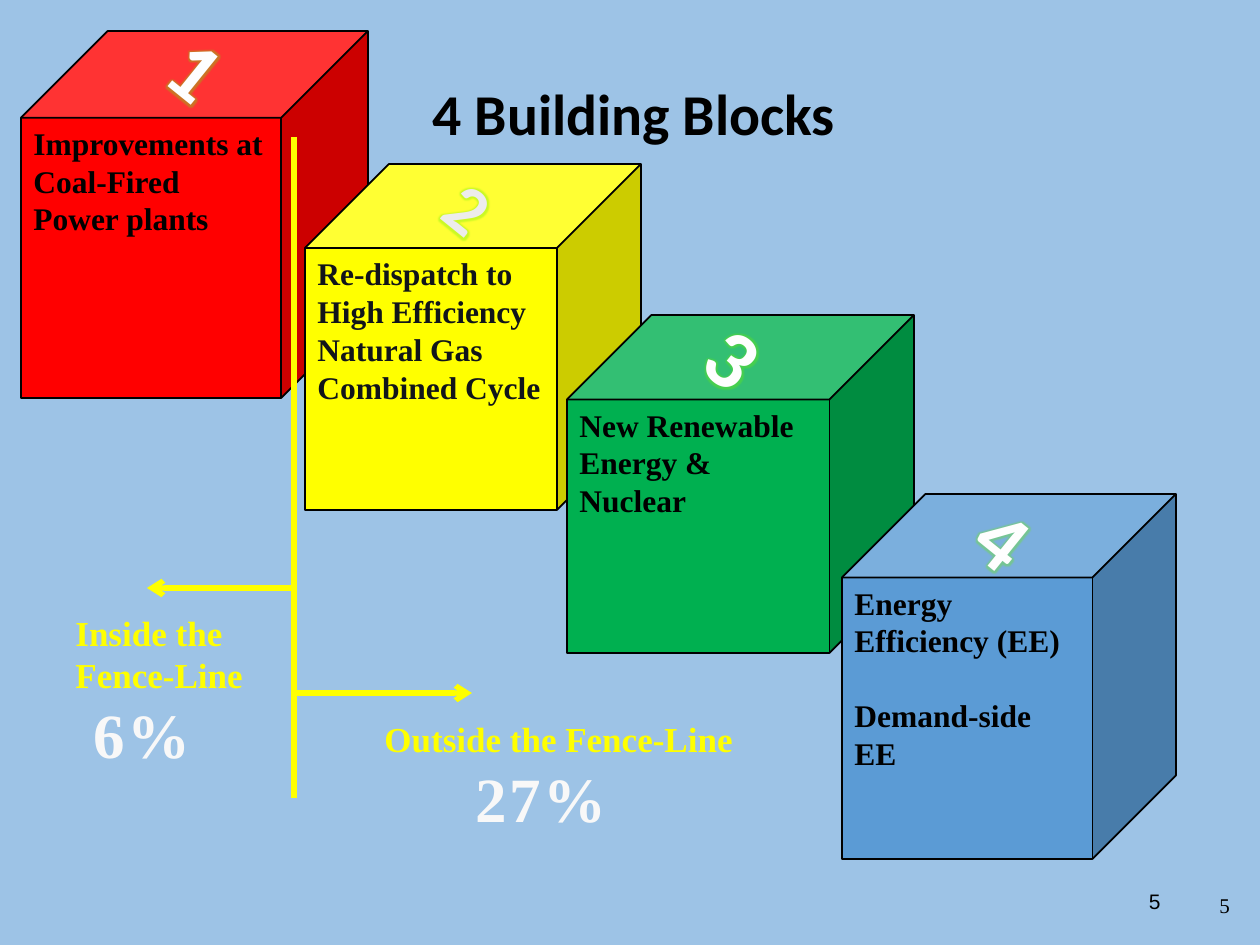
from typing import NamedTuple

from lxml.etree import SubElement
from pptx import Presentation
from pptx.dml.color import RGBColor
from pptx.enum.shapes import MSO_CONNECTOR, MSO_SHAPE
from pptx.enum.text import MSO_ANCHOR, MSO_AUTO_SIZE, PP_ALIGN
from pptx.oxml import parse_xml
from pptx.oxml.ns import nsdecls, qn
from pptx.util import Pt

SCALE = 914400 / 126
SERIF = "Times New Roman"
SANS = "Calibri"
HUES = {
    "sky": "9DC3E6",
    "black": "000000",
    "ink": "11151A",
    "red": "FF0000",
    "yellow": "FFFF00",
    "green": "00B050",
    "blue": "5B9BD5",
    "pale": "F8F8F8",
    "white": "FEFEFE",
    "grey": "EDECEC",
    "edge": "64A637",
    "glow": "6CF00A",
}


class Box(NamedTuple):
    left: int
    top: int
    width: int
    height: int


class Cube(NamedTuple):
    box: Box
    fill: str
    lines: list[str]
    ink: str = "black"


class Label(NamedTuple):
    text: str
    box: Box
    size: int
    hue: str
    font: str = SERIF
    bold: bool = True
    align: PP_ALIGN = PP_ALIGN.LEFT
    anchor: MSO_ANCHOR = MSO_ANCHOR.TOP
    space: int = 0
    turn: int = 0
    glow: bool = False


class Line(NamedTuple):
    start: tuple[int, int]
    end: tuple[int, int]
    arrow: bool = False


CUBES = [
    Cube(Box(21, 31, 347, 367), "red", ["Improvements at Coal-Fired Power plants"]),
    Cube(Box(305, 164, 336, 346), "yellow",
         ["Re-dispatch to High Efficiency Natural Gas Combined Cycle"], "ink"),
    Cube(Box(567, 315, 347, 338), "green", ["New Renewable Energy & Nuclear"]),
    Cube(Box(842, 494, 334, 365), "blue", ["Energy Efficiency (EE)", "Demand-side EE"]),
]

LINES = [
    Line((294, 137), (294, 798)),
    Line((294, 588), (147, 588), True),
    Line((294, 693), (472, 693), True),
]


def share(text: str, box: Box) -> Label:
    return Label(text, box, 36, "pale", align=PP_ALIGN.CENTER, space=150)


def digit(text: str, box: Box, size: int = 48, hue: str = "white") -> Label:
    return Label(text, box, size, hue, SANS, align=PP_ALIGN.CENTER,
                 space=50, turn=39, glow=True)


PAGES = [
    Label("5", Box(890, 876, 283, 50), 12, "black", "Arial", False,
          PP_ALIGN.RIGHT, MSO_ANCHOR.MIDDLE),
    Label("5", Box(1207, 858, 53, 66), 12, "black", SERIF, False,
          anchor=MSO_ANCHOR.BOTTOM),
]

LABELS = [
    Label("Inside the Fence-Line", Box(63, 605, 194, 97), 20, "yellow"),
    Label("Outside the Fence-Line", Box(372, 711, 384, 55), 20, "yellow"),
    share("6%", Box(63, 689, 158, 89)),
    share("27%", Box(462, 753, 158, 89)),
    digit("3", Box(698, 299, 73, 115)),
    digit("4", Box(968, 480, 73, 115)),
    digit("1", Box(161, 11, 73, 115)),
    digit("2", Box(437, 159, 66, 97), 40, "grey"),
]


def px(num: int) -> int:
    return round(num * SCALE)


def place(box: Box) -> list[int]:
    return [px(num) for num in box]


def tint(hue: str) -> RGBColor:
    return RGBColor.from_string(HUES[hue])


def style(para, size: int, hue: str, font: str, bold: bool) -> None:
    para.font.size = Pt(size)
    para.font.name = font
    para.font.bold = bold
    para.font.color.rgb = tint(hue)


def draw_cube(slide, cube: Cube) -> None:
    shape = slide.shapes.add_shape(MSO_SHAPE.CUBE, *place(cube.box))
    shape.shadow.inherit = False
    shape.fill.solid()
    shape.fill.fore_color.rgb = tint(cube.fill)
    shape.line.color.rgb = tint("black")
    shape.line.width = Pt(1)
    frame = shape.text_frame
    frame.word_wrap = True
    frame.vertical_anchor = MSO_ANCHOR.TOP
    for num, text in enumerate(cube.lines):
        para = frame.add_paragraph() if num else frame.paragraphs[0]
        para.text = text
        para.alignment = PP_ALIGN.LEFT
        para.space_before = Pt(21 if num else 0)
        style(para, 18, cube.ink, SERIF, True)


def draw_line(slide, line: Line) -> None:
    link = slide.shapes.add_connector(
        MSO_CONNECTOR.STRAIGHT, *map(px, line.start + line.end))
    link.line.color.rgb = tint("yellow")
    link.line.width = Pt(3)
    if line.arrow:
        SubElement(link.line._get_or_add_ln(), qn("a:tailEnd"), type="arrow")
    SubElement(link._element.spPr, qn("a:effectLst"))


def add_glow(props) -> None:
    edge = parse_xml(
        f'<a:ln {nsdecls("a")} w="12700"><a:solidFill>'
        f'<a:srgbClr val="{HUES["edge"]}"/></a:solidFill></a:ln>')
    halo = parse_xml(
        f'<a:effectLst {nsdecls("a")}><a:glow rad="45500">'
        f'<a:srgbClr val="{HUES["glow"]}"><a:alpha val="35000"/></a:srgbClr>'
        '</a:glow></a:effectLst>')
    fill = parse_xml(
        f'<a:solidFill {nsdecls("a")}><a:srgbClr val="{HUES["white"]}"/></a:solidFill>')
    for num, item in enumerate((edge, fill, halo)):
        props.insert(num, item)


def draw_label(slide, label: Label) -> None:
    shape = slide.shapes.add_textbox(*place(label.box))
    shape.rotation = label.turn
    frame = shape.text_frame
    frame.word_wrap = not label.glow
    frame.vertical_anchor = label.anchor
    para = frame.paragraphs[0]
    para.alignment = label.align
    run = para.add_run()
    run.text = label.text
    style(para, label.size, label.hue, label.font, label.bold)
    props = run._r.get_or_add_rPr()
    if label.space:
        props.set("spc", str(label.space))
    if label.glow:
        add_glow(props)
        run.font.color.rgb = tint(label.hue)


def draw_title(slide) -> None:
    title = slide.shapes.title
    title.left, title.top, title.width, title.height = place(Box(420, 38, 777, 158))
    frame = title.text_frame
    frame.text = "4 Building Blocks"
    frame.auto_size = MSO_AUTO_SIZE.NONE
    frame.vertical_anchor = MSO_ANCHOR.MIDDLE
    para = frame.paragraphs[0]
    para.alignment = PP_ALIGN.LEFT
    para.line_spacing = 0.9
    style(para, 33, "black", SANS, True)


def main() -> None:
    deck = Presentation()
    deck.slide_width, deck.slide_height = px(1260), px(945)
    slide = deck.slides.add_slide(deck.slide_layouts[5])
    slide.background.fill.solid()
    slide.background.fill.fore_color.rgb = tint("sky")
    draw_title(slide)
    for page in PAGES:
        draw_label(slide, page)
    for cube in CUBES:
        draw_cube(slide, cube)
    for line in LINES:
        draw_line(slide, line)
    for label in LABELS:
        draw_label(slide, label)
    deck.save("out.pptx")


if __name__ == "__main__":
    main()
